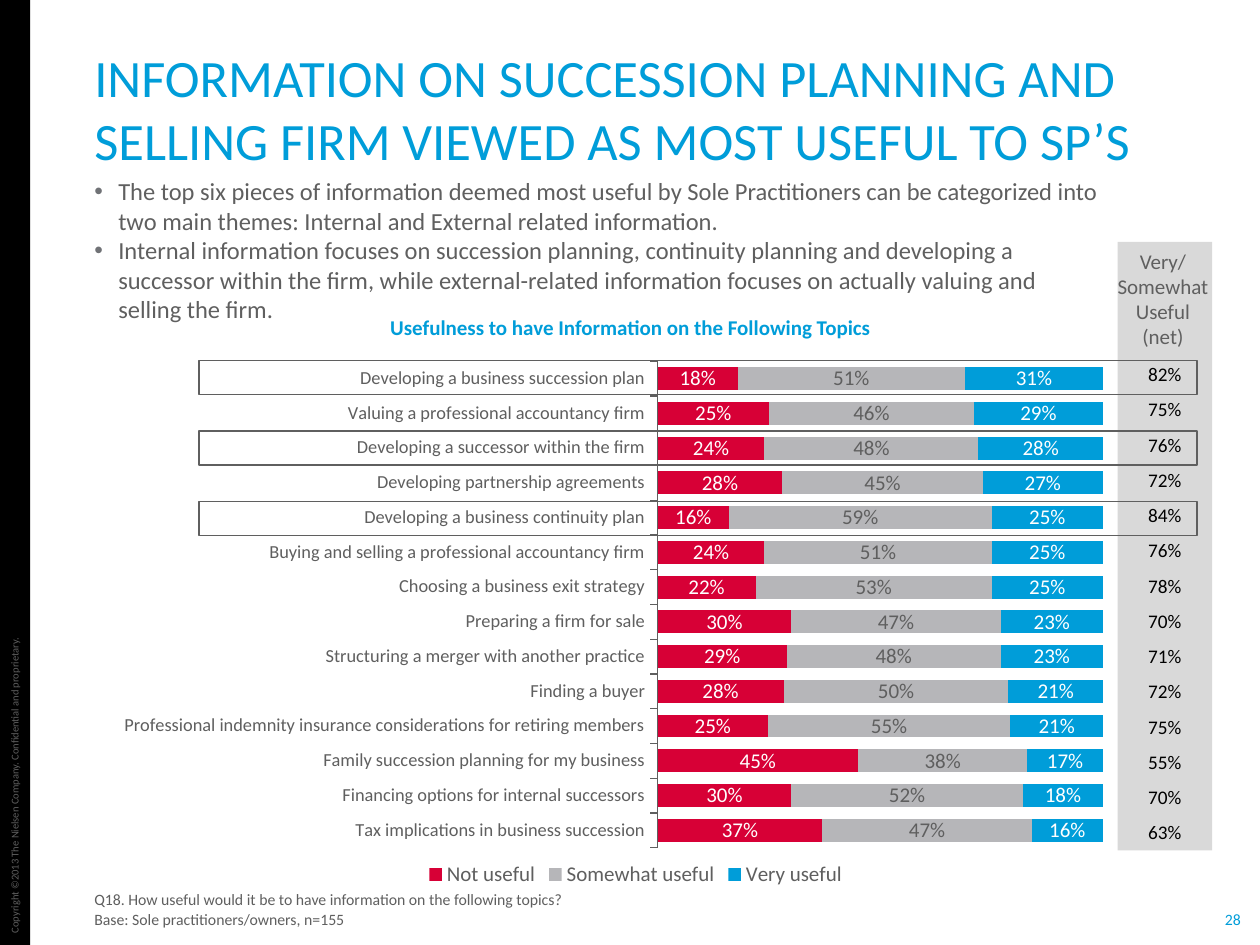
from lxml import etree
from pptx import Presentation
from pptx.chart.data import CategoryChartData
from pptx.dml.color import RGBColor
from pptx.enum.chart import (XL_CHART_TYPE as ChartType, XL_LABEL_POSITION as LabelPos,
                             XL_LEGEND_POSITION as LegendPos, XL_TICK_MARK as Tick)
from pptx.enum.shapes import MSO_SHAPE as Shape
from pptx.enum.text import MSO_ANCHOR as Anchor, PP_ALIGN as Align
from pptx.oxml import parse_xml
from pptx.oxml.ns import nsdecls, qn
from pptx.util import Inches, Pt

# Content
COLORS = {"blue": "009DD9", "red": "D70036", "silver": "B6B6B9", "text": "5F5F5F",
          "bullet": "707276", "band": "D9D9D9", "black": "000000", "white": "FFFFFF"}
FONT = "Calibri"
TITLE = "INFORMATION ON SUCCESSION PLANNING AND SELLING FIRM VIEWED AS MOST USEFUL TO SP’S"
FINDINGS = [
    "The top six pieces of information deemed most useful by Sole Practitioners can be "
    "categorized into two main themes: Internal and External related information.",
    "Internal information focuses on succession planning, continuity planning and developing "
    "a successor within the firm, while external-related information focuses on actually "
    "valuing and selling the firm.",
]
CHART_TITLE = "Usefulness to have Information on the Following Topics"
NET_HEADING = ["Very/ Somewhat Useful", "(net)"]
NOTES = ["Q18. How useful would it be to have information on the following topics?",
         "Base: Sole practitioners/owners, n=155"]
COPYRIGHT = "Copyright ©2013 The Nielsen Company. Confidential and proprietary."
PAGE = "28"
ANSWERS = [("Not useful", "red", "white"), ("Somewhat useful", "silver", "text"),
           ("Very useful", "blue", "white")]
# Topic, percent for each answer, net percent useful
TOPICS = [
    ("Developing a business succession plan", (18, 51, 31), 82),
    ("Valuing a professional accountancy firm", (25, 46, 29), 75),
    ("Developing a successor within the firm", (24, 48, 28), 76),
    ("Developing partnership agreements", (28, 45, 27), 72),
    ("Developing a business continuity plan", (16, 59, 25), 84),
    ("Buying and selling a professional accountancy firm", (24, 51, 25), 76),
    ("Choosing a business exit strategy", (22, 53, 25), 78),
    ("Preparing a firm for sale", (30, 47, 23), 70),
    ("Structuring a merger with another practice", (29, 48, 23), 71),
    ("Finding a buyer", (28, 50, 21), 72),
    ("Professional indemnity insurance considerations for retiring members", (25, 55, 21), 75),
    ("Family succession planning for my business", (45, 38, 17), 55),
    ("Financing options for internal successors", (30, 52, 18), 70),
    ("Tax implications in business succession", (37, 47, 16), 63),
]
INTERNAL_ROWS = (0, 2, 4)
ROW_HEIGHT = 0.28
NO_GRID_STYLE = "{2D5ABB26-0587-4C30-8999-92F81FD0307C}"
PLOT = {"x": 0.52, "y": 0.027, "w": 0.404, "h": 0.892}


def rgb(name):
    return RGBColor.from_string(COLORS[name])


def style_font(font, size, color="text", bold=False):
    for key, value in {"name": FONT, "size": Pt(size), "bold": bold}.items():
        setattr(font, key, value)
    font.color.rgb = rgb(color)


def add_bullet(paragraph):
    props = paragraph._p.get_or_add_pPr()
    props.set("marL", str(Inches(0.19)))
    props.set("indent", str(-Inches(0.19)))
    for xml in (f'<a:buClr {nsdecls("a")}><a:srgbClr val="{COLORS["bullet"]}"/></a:buClr>',
                f'<a:buFont {nsdecls("a")} typeface="Arial"/>',
                f'<a:buChar {nsdecls("a")} char="•"/>'):
        props.append(parse_xml(xml))


def add_text(slide, box, lines, size, color="text", bold=False, align=Align.LEFT,
             anchor=Anchor.TOP, side=0.1, edge=0, gap=0, bullets=False, wrap=True):
    text_box = slide.shapes.add_textbox(*map(Inches, box))
    frame = text_box.text_frame
    layout = {"word_wrap": wrap, "vertical_anchor": anchor,
              "margin_left": Inches(side), "margin_right": Inches(side),
              "margin_top": Inches(edge), "margin_bottom": Inches(edge)}
    for key, value in layout.items():
        setattr(frame, key, value)
    for i, line in enumerate(lines):
        paragraph = frame.add_paragraph() if i else frame.paragraphs[0]
        paragraph.text = line
        paragraph.alignment = align
        if i and gap:
            paragraph.space_before = Pt(gap)
        if bullets:
            add_bullet(paragraph)
        style_font(paragraph.runs[0].font, size, color, bold)
    return text_box


def add_rect(slide, box, fill=None, line=None):
    rect = slide.shapes.add_shape(Shape.RECTANGLE, *map(Inches, box))
    rect.shadow.inherit = False
    if fill:
        rect.fill.solid()
        rect.fill.fore_color.rgb = rgb(fill)
    else:
        rect.fill.background()
    if line:
        rect.line.color.rgb = rgb(line)
        rect.line.width = Pt(0.75)
    else:
        rect.line.fill.background()


def add_usefulness_chart(slide):
    data = CategoryChartData(number_format="0%")
    data.categories = [topic for topic, _, _ in TOPICS]
    for i, (answer, _, _) in enumerate(ANSWERS):
        data.add_series(answer, [shares[i] / 100 for _, shares, _ in TOPICS])
    chart = slide.shapes.add_chart(ChartType.BAR_STACKED_100,
                                   *map(Inches, (0.67, 2.75, 8.75, 4.33)), data).chart
    style_font(chart.font, 18)
    chart.has_title = False
    chart.has_legend = True
    chart.legend.position = LegendPos.BOTTOM
    chart.legend.include_in_layout = False
    style_font(chart.legend.font, 12)

    topics_axis = chart.category_axis
    topics_axis.reverse_order = True
    topics_axis.major_tick_mark = Tick.OUTSIDE
    topics_axis.format.line.color.rgb = rgb("text")
    style_font(topics_axis.tick_labels.font, 10.5)
    chart.value_axis.visible = False
    chart.value_axis.has_major_gridlines = False

    plot = chart.plots[0]
    plot.gap_width, plot.overlap, plot.vary_by_categories = 52, 100, False
    for series, (_, fill, label_color) in zip(plot.series, ANSWERS):
        series.format.fill.solid()
        series.format.fill.fore_color.rgb = rgb(fill)
        labels = series.data_labels
        for key, value in {"show_value": True, "position": LabelPos.CENTER,
                           "number_format": "#,##0%",
                           "number_format_is_linked": False}.items():
            setattr(labels, key, value)
        style_font(labels.font, 12, label_color)

    # Fixed inner plot area, so that the bars line up with the net column
    area = chart._chartSpace.find(".//" + qn("c:plotArea"))
    for old in area.findall(qn("c:layout")):
        area.remove(old)
    layout = etree.Element(qn("c:layout"))
    manual = etree.SubElement(layout, qn("c:manualLayout"))
    settings = {"layoutTarget": "inner", "xMode": "edge", "yMode": "edge", **PLOT}
    for tag, value in settings.items():
        etree.SubElement(manual, qn("c:" + tag)).set("val", str(value))
    area.insert(0, layout)


def add_net_table(slide):
    box = (8.87, 2.83, 0.75, ROW_HEIGHT * len(TOPICS))
    table = slide.shapes.add_table(len(TOPICS), 1, *map(Inches, box)).table
    table.first_row = table.horz_banding = False
    table._tbl.tblPr.find(qn("a:tableStyleId")).text = NO_GRID_STYLE
    for row, (_, _, net) in enumerate(TOPICS):
        table.rows[row].height = Inches(ROW_HEIGHT)
        cell = table.cell(row, 0)
        cell.fill.background()
        cell.vertical_anchor = Anchor.MIDDLE
        cell.margin_left = cell.margin_right = cell.margin_top = Inches(0.01)
        cell.margin_bottom = 0
        cell.text = f"{net}%"
        paragraph = cell.text_frame.paragraphs[0]
        paragraph.alignment = Align.CENTER
        style_font(paragraph.runs[0].font, 11, "black")


def main():
    deck = Presentation()
    deck.slide_width, deck.slide_height = Inches(10), Inches(7.5)
    slide = deck.slides.add_slide(deck.slide_layouts[6])

    # Side strip and page number
    add_rect(slide, (0, 0, 0.24, 7.5), fill="black")
    add_text(slide, (-1.18, 6.11, 2.59, 0.2), [COPYRIGHT], 6, edge=0.05,
             wrap=False).rotation = 270
    add_text(slide, (9.71, 7.22, 0.15, 0.15), [PAGE], 9, "blue", align=Align.CENTER,
             anchor=Anchor.MIDDLE, side=0, wrap=False)

    # Chart, headings and notes
    add_usefulness_chart(slide)
    add_text(slide, (0.65, 1.4, 8.18, 0.85), FINDINGS, 14, bullets=True)
    add_text(slide, (0.65, 0.74, 9.18, 0.62), [TITLE], 30, "blue", anchor=Anchor.BOTTOM)
    add_text(slide, (0.65, 6.97, 8.93, 0.4), NOTES, 9, anchor=Anchor.BOTTOM, gap=0.6)
    add_text(slide, (2.67, 2.5, 4.67, 0.42), [CHART_TITLE], 12, "blue", bold=True,
             align=Align.CENTER)

    # Net column and frames around the internal topics
    add_rect(slide, (8.87, 1.92, 0.75, 4.83), fill="band")
    add_net_table(slide)
    add_text(slide, (8.76, 1.92, 0.94, 0.91), NET_HEADING, 12, align=Align.CENTER, edge=0.05)
    for row in INTERNAL_ROWS:
        add_rect(slide, (1.58, 2.86 + row * ROW_HEIGHT, 7.92, 0.27), line="text")

    deck.save("out.pptx")


if __name__ == "__main__":
    main()
